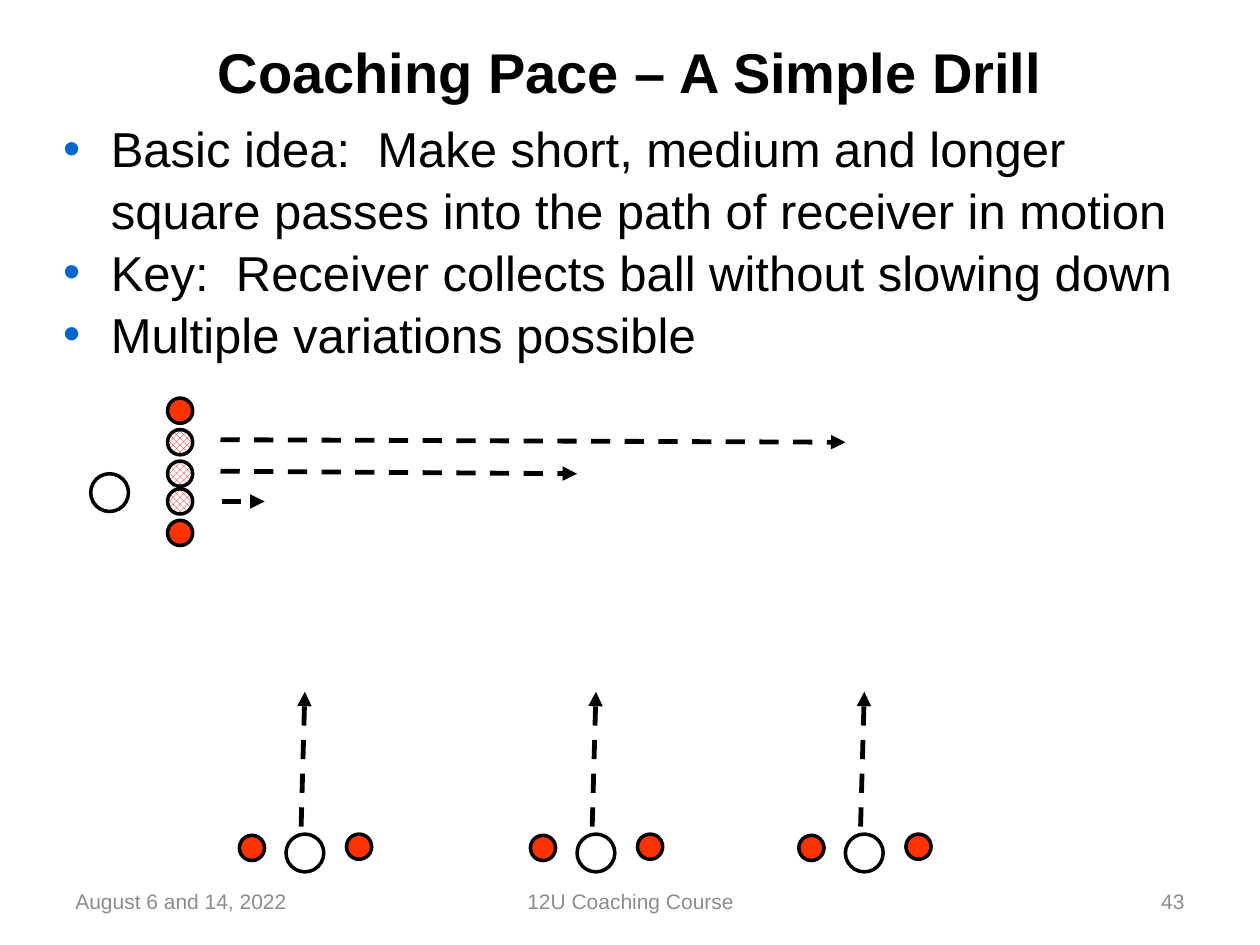
from lxml.etree import SubElement
from pptx import Presentation
from pptx.dml.color import RGBColor
from pptx.enum.dml import MSO_LINE, MSO_PATTERN
from pptx.enum.shapes import MSO_CONNECTOR, MSO_SHAPE
from pptx.enum.text import MSO_ANCHOR, MSO_AUTO_SIZE, PP_ALIGN
from pptx.oxml.ns import qn
from pptx.util import Inches, Pt

BLACK = RGBColor(0, 0, 0)
WHITE = RGBColor(255, 255, 255)
GRAY = RGBColor(0x8C, 0x8C, 0x8C)
CONE = RGBColor(0xFF, 0x33, 0x00)
CHECK = RGBColor(0xFF, 0, 0)
BULLET = "0066CC"

TITLE = "Coaching Pace – A Simple Drill"
POINTS = [
    "Basic idea:  Make short, medium and longer square passes into the path of receiver in motion",
    "Key:  Receiver collects ball without slowing down",
    "Multiple variations possible",
]
FOOTERS = [  # text, left, width, alignment
    ("August 6 and 14, 2022", 0.5, 2.33, PP_ALIGN.LEFT),
    ("12U Coaching Course", 3.42, 3.17, PP_ALIGN.CENTER),
    ("43", 7.17, 2.33, PP_ALIGN.RIGHT),
]

PLAYER_SIZE, CONE_SIZE = 0.3, 0.2
PASSER = (0.87, 3.91)
COLUMN_X = 1.43
CONE_YS = [3.26, 4.23]
BALL_YS = [3.51, 3.76, 3.98]
PASSES = [  # start, end
    ((1.75, 3.49), (6.71, 3.51)),
    ((1.75, 3.74), (4.58, 3.76)),
    ((1.76, 3.98), (2.1, 3.98)),
]
RECEIVER_XS = [2.42, 4.73, 6.86]
RECEIVER_Y = 6.77
GATE_CONES = [(-0.42, -0.04), (0.43, -0.05)]  # offsets from the receiver
RUN_START, RUN_END = (-0.03, -0.21), (0, -1.28)


def place(shape, left, top, width, height):
    shape.left, shape.top = Inches(left), Inches(top)
    shape.width, shape.height = Inches(width), Inches(height)


def add_text(paragraph, text, size, color, bold=False):
    run = paragraph.add_run()
    run.text = text
    font = run.font
    font.name, font.size, font.bold = "Arial", Pt(size), bold
    font.color.rgb = color


def reset_frame(frame, anchor):
    frame.word_wrap = True
    frame.auto_size = MSO_AUTO_SIZE.NONE
    frame.vertical_anchor = anchor
    frame.margin_left = frame.margin_right = frame.margin_top = frame.margin_bottom = 0


def add_bullet(paragraph):
    props = paragraph._p.get_or_add_pPr()
    props.set("marL", str(Inches(0.38)))
    props.set("indent", str(-Inches(0.38)))
    SubElement(SubElement(props, qn("a:buClr")), qn("a:srgbClr")).set("val", BULLET)
    SubElement(props, qn("a:buFont")).set("typeface", "Arial")
    SubElement(props, qn("a:buChar")).set("char", "•")


def add_circle(x, y, size):
    """Draw an unfilled circle centred on x, y."""
    circle = slide.shapes.add_shape(
        MSO_SHAPE.FLOWCHART_CONNECTOR,
        Inches(x - size / 2), Inches(y - size / 2), Inches(size), Inches(size))
    circle.shadow.inherit = False
    circle.fill.background()
    circle.line.color.rgb = BLACK
    circle.line.width = Pt(2)
    return circle


def add_cone(x, y):
    fill = add_circle(x, y, CONE_SIZE).fill
    fill.solid()
    fill.fore_color.rgb = CONE


def add_ball(x, y):
    fill = add_circle(x, y, CONE_SIZE).fill
    fill.patterned()
    fill.pattern = MSO_PATTERN.LARGE_CHECKER_BOARD
    fill.fore_color.rgb = CHECK
    fill.back_color.rgb = WHITE


def add_arrow(start, end):
    arrow = slide.shapes.add_connector(
        MSO_CONNECTOR.STRAIGHT, *(Inches(v) for v in (*start, *end)))
    arrow.line.color.rgb = BLACK
    arrow.line.width = Pt(2.75)
    arrow.line.dash_style = MSO_LINE.DASH
    SubElement(arrow.line._get_or_add_ln(), qn("a:tailEnd")).set("type", "triangle")
    SubElement(arrow._element.spPr, qn("a:effectLst"))


prs = Presentation()
prs.slide_width, prs.slide_height = Inches(10), Inches(7.5)
slide = prs.slides.add_slide(prs.slide_layouts[1])

title, body = slide.placeholders
place(title, 0.5, 0.3, 9, 0.53)
reset_frame(title.text_frame, MSO_ANCHOR.MIDDLE)
heading = title.text_frame.paragraphs[0]
heading.alignment = PP_ALIGN.CENTER
add_text(heading, TITLE, 32, BLACK, bold=True)

place(body, 0.5, 0.92, 9.25, 2.01)
reset_frame(body.text_frame, MSO_ANCHOR.TOP)
for i, point in enumerate(POINTS):
    item = body.text_frame.add_paragraph() if i else body.text_frame.paragraphs[0]
    add_bullet(item)
    item.space_before = Pt(0)
    item.line_spacing = 1.05
    add_text(item, point, 28, BLACK)

for text, left, width, alignment in FOOTERS:
    footer = slide.shapes.add_textbox(Inches(left), Inches(6.95), Inches(width), Inches(0.4))
    footer.text_frame.word_wrap = True
    footer.text_frame.vertical_anchor = MSO_ANCHOR.MIDDLE
    line = footer.text_frame.paragraphs[0]
    line.alignment = alignment
    add_text(line, text, 12, GRAY)

add_circle(*PASSER, PLAYER_SIZE)
for y in CONE_YS:
    add_cone(COLUMN_X, y)
for y in BALL_YS:
    add_ball(COLUMN_X, y)
for start, end in PASSES:
    add_arrow(start, end)

for x in RECEIVER_XS:
    add_arrow(*((x + dx, RECEIVER_Y + dy) for dx, dy in (RUN_START, RUN_END)))
    add_circle(x, RECEIVER_Y, PLAYER_SIZE)
    for dx, dy in GATE_CONES:
        add_cone(x + dx, RECEIVER_Y + dy)

prs.save("out.pptx")
